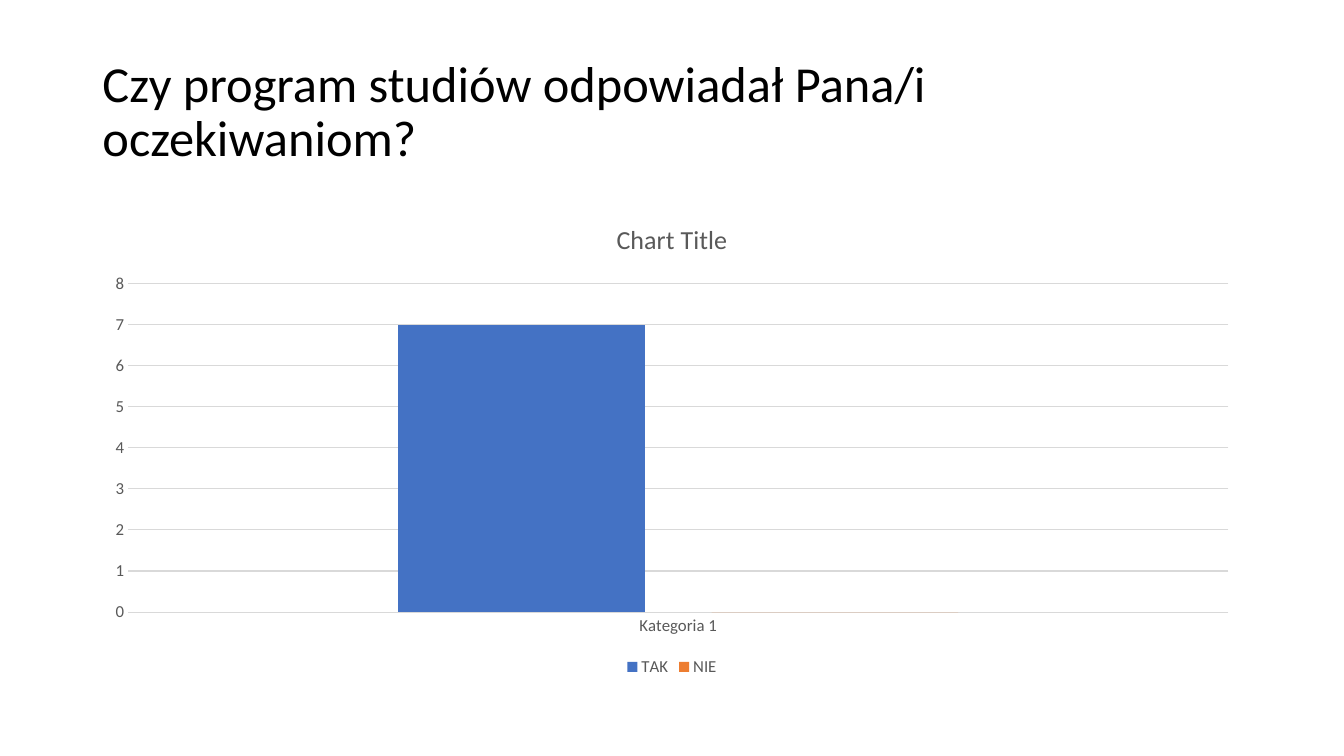
from pptx import Presentation
from pptx.chart.data import CategoryChartData
from pptx.dml.color import RGBColor
from pptx.enum.chart import XL_CHART_TYPE, XL_LEGEND_POSITION, XL_TICK_MARK
from pptx.enum.text import MSO_ANCHOR, MSO_AUTO_SIZE, PP_ALIGN
from pptx.util import Pt

COLUMNS = XL_CHART_TYPE.COLUMN_CLUSTERED
LEGEND_BOTTOM = XL_LEGEND_POSITION.BOTTOM
NO_TICK = XL_TICK_MARK.NONE
MIDDLE = MSO_ANCHOR.MIDDLE
NO_FIT = MSO_AUTO_SIZE.NONE
LEFT = PP_ALIGN.LEFT

QUESTION = "Czy program studiów odpowiadał Pana/i oczekiwaniom?"
CHART_TITLE = "Chart Title"
CATEGORIES = ["Kategoria 1"]
ANSWERS = {"TAK": [7], "NIE": [0]}

COLORS = {"title": "000000", "label": "595959", "line": "D9D9D9",
          "TAK": "4472C4", "NIE": "ED7D31"}
FONT = "Calibri"
SLIDE_WIDTH, SLIDE_HEIGHT = 960, 540
MARGIN = 66
CONTENT_WIDTH = SLIDE_WIDTH - 2 * MARGIN
TITLE_TOP, TITLE_HEIGHT = 28.75, 104.4
CHART_TOP, CHART_HEIGHT = 143.75, 342.6


def apply(target, values):
    for attribute, value in values.items():
        setattr(target, attribute, value)


def format_font(font, size, color):
    apply(font, {"name": FONT, "size": Pt(size), "bold": False})
    font.color.rgb = RGBColor.from_string(COLORS[color])


def format_line(line):
    line.color.rgb = RGBColor.from_string(COLORS["line"])
    line.width = Pt(0.75)


def add_question(slide):
    title = slide.shapes.title
    apply(title, {"left": Pt(MARGIN), "top": Pt(TITLE_TOP),
                  "width": Pt(CONTENT_WIDTH), "height": Pt(TITLE_HEIGHT)})
    frame = title.text_frame
    frame.text = QUESTION
    apply(frame, {"word_wrap": True, "auto_size": NO_FIT,
                  "vertical_anchor": MIDDLE})
    paragraph = frame.paragraphs[0]
    apply(paragraph, {"alignment": LEFT, "line_spacing": 0.9})
    format_font(paragraph.runs[0].font, 36, "title")


def add_answer_chart(slide):
    answers = CategoryChartData()
    answers.categories = CATEGORIES
    for answer, counts in ANSWERS.items():
        answers.add_series(answer, counts)
    chart = slide.shapes.add_chart(
        COLUMNS, Pt(MARGIN), Pt(CHART_TOP), Pt(CONTENT_WIDTH),
        Pt(CHART_HEIGHT), answers).chart
    format_font(chart.font, 12, "label")

    heading = chart.chart_title.text_frame
    heading.text = CHART_TITLE
    format_font(heading.paragraphs[0].runs[0].font, 18.6, "label")

    chart.has_legend = True
    apply(chart.legend, {"position": LEGEND_BOTTOM, "include_in_layout": False})
    format_font(chart.legend.font, 12, "label")

    for axis in (chart.category_axis, chart.value_axis):
        apply(axis, {"major_tick_mark": NO_TICK, "minor_tick_mark": NO_TICK})
        format_font(axis.tick_labels.font, 12, "label")
    format_line(chart.category_axis.format.line)
    counts_axis = chart.value_axis
    apply(counts_axis, {"minimum_scale": 0, "maximum_scale": 8, "major_unit": 1})
    counts_axis.format.line.fill.background()
    format_line(counts_axis.major_gridlines.format.line)

    plot = chart.plots[0]
    apply(plot, {"gap_width": 219, "overlap": -27, "vary_by_categories": False})
    for answer in plot.series:
        answer.format.fill.solid()
        answer.format.fill.fore_color.rgb = RGBColor.from_string(COLORS[answer.name])


def main():
    deck = Presentation()
    apply(deck, {"slide_width": Pt(SLIDE_WIDTH), "slide_height": Pt(SLIDE_HEIGHT)})
    slide = deck.slides.add_slide(deck.slide_layouts.get_by_name("Title Only"))
    add_question(slide)
    add_answer_chart(slide)
    deck.save("out.pptx")


if __name__ == "__main__":
    main()
